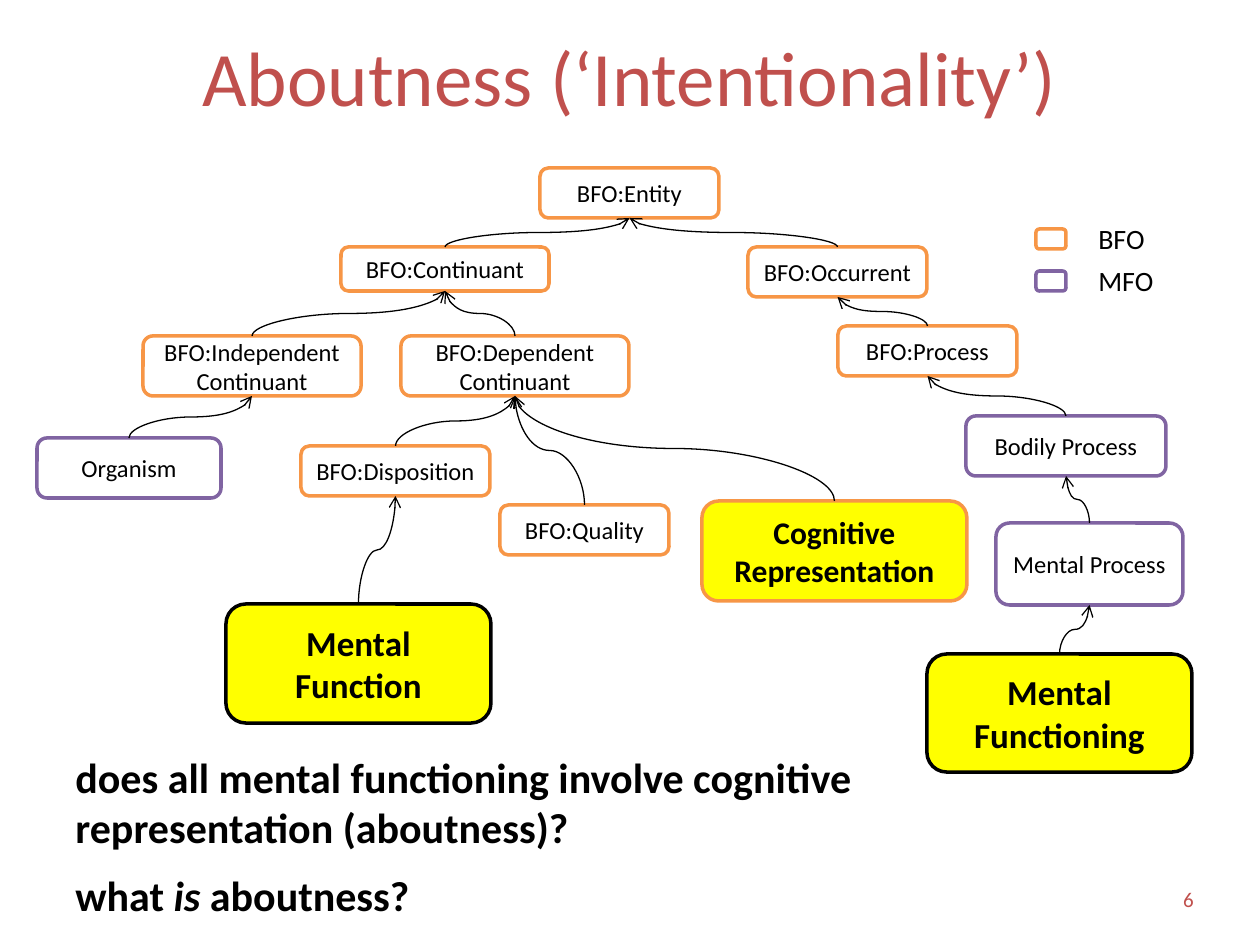
"""Builds the slide on aboutness: a class tree, its legend and two questions."""
from dataclasses import dataclass

from lxml.etree import SubElement
from pptx import Presentation
from pptx.dml.color import RGBColor
from pptx.enum.shapes import MSO_CONNECTOR as CONN, MSO_SHAPE as SHAPE
from pptx.enum.text import MSO_ANCHOR as ANCHOR, PP_ALIGN as ALIGN
from pptx.oxml.ns import qn
from pptx.util import Emu, Pt


@dataclass(frozen=True)
class Theme:
    font: str = "Calibri"
    accent: str = "C0504D"
    ink: str = "000000"
    paper: str = "FFFFFF"
    bfo: str = "F79646"
    mfo: str = "8064A2"
    focus: str = "FFFF00"
    title: int = 44
    question: int = 24
    function: int = 20
    representation: int = 18
    legend: int = 16
    node: int = 14
    number: int = 12
    outline: float = 2
    link: float = 0.75


def px(n):
    return Emu(round(n * 914400 / 126))


def rgb(color):
    return RGBColor.from_string(color)


class Deck:
    def __init__(self, theme, width, height):
        self.t = theme
        self.prs = Presentation()
        self.prs.slide_width, self.prs.slide_height = px(width), px(height)
        self.s = self.prs.slides.add_slide(self.prs.slide_layouts[6])

    def style(self, p, size, color, bold=False, align=ALIGN.LEFT):
        p.alignment = align
        f = p.font
        f.name, f.size, f.bold = self.t.font, Pt(size), bold
        f.color.rgb = rgb(color)

    def text(self, box, paragraphs, size, color, bold=False, align=ALIGN.LEFT,
             anchor=ANCHOR.TOP, gap=0):
        tf = self.s.shapes.add_textbox(*map(px, box)).text_frame
        tf.word_wrap, tf.vertical_anchor = True, anchor
        for i, runs in enumerate(paragraphs):
            p = tf.add_paragraph() if i else tf.paragraphs[0]
            self.style(p, size, color, bold, align)
            if i:
                p.space_before = Pt(gap)
            for words, italic in runs:
                r = p.add_run()
                r.text = words
                if italic:
                    r.font.italic = True

    def node(self, box, line, label="", size=None, fill=None, bold=False):
        sp = self.s.shapes.add_shape(SHAPE.ROUNDED_RECTANGLE, *map(px, box))
        sp.shadow.inherit = False
        sp.fill.solid()
        sp.fill.fore_color.rgb = rgb(fill or self.t.paper)
        sp.line.color.rgb, sp.line.width = rgb(line), Pt(self.t.outline)
        if label:
            tf = sp.text_frame
            tf.word_wrap, tf.vertical_anchor = True, ANCHOR.MIDDLE
            p = tf.paragraphs[0]
            p.text = label
            self.style(p, size or self.t.node, self.t.ink, bold, ALIGN.CENTER)
        return sp

    def link(self, child, parent):
        x1, y1 = child.left + child.width // 2, child.top
        x2, y2 = parent.left + parent.width // 2, parent.top + parent.height
        c = self.s.shapes.add_connector(CONN.CURVE, x1, y1, x2, y2)
        c.begin_connect(child, 0)
        c.end_connect(parent, 2)
        w, h = y1 - y2, abs(x2 - x1)
        c.left, c.top = Emu((x1 + x2 - w) // 2), Emu((y1 + y2 - h) // 2)
        c.width, c.height = Emu(w), Emu(h)
        rightward = x2 > x1
        xfrm = c._element.spPr.find(qn("a:xfrm"))
        xfrm.set("rot", "5400000" if rightward else "16200000")
        xfrm.set("flipH", "1" if rightward else "0")
        xfrm.set("flipV", "1")
        c.line.color.rgb, c.line.width = rgb(self.t.ink), Pt(self.t.link)
        SubElement(c.line._get_or_add_ln(), qn("a:tailEnd"), type="arrow")
        SubElement(c._element.spPr, qn("a:effectLst"))


def main():
    t = Theme()
    d = Deck(t, 1260, 945)
    d.text((63, 21, 1134, 110), [[("Aboutness (‘Intentionality’)", False)]],
           t.title, t.accent, align=ALIGN.CENTER, anchor=ANCHOR.MIDDLE)
    d.text((912, 882, 294, 34), [[("6", False)]], t.number, t.accent,
           align=ALIGN.RIGHT, anchor=ANCHOR.MIDDLE)

    plain = [
        ("BFO:Entity", (540, 168, 179, 50), t.bfo, None),
        ("BFO:Continuant", (341, 247, 208, 44), t.bfo, "BFO:Entity"),
        ("BFO:Occurrent", (748, 247, 179, 50), t.bfo, "BFO:Entity"),
        ("BFO:Process", (838, 326, 179, 50), t.bfo, "BFO:Occurrent"),
        ("BFO:Independent Continuant", (143, 336, 218, 60), t.bfo, "BFO:Continuant"),
        ("BFO:Dependent Continuant", (401, 336, 228, 60), t.bfo, "BFO:Continuant"),
        ("Organism", (37, 438, 184, 60), t.mfo, "BFO:Independent Continuant"),
        ("BFO:Disposition", (301, 446, 189, 50), t.bfo, "BFO:Dependent Continuant"),
        ("BFO:Quality", (500, 505, 169, 50), t.bfo, "BFO:Dependent Continuant"),
        ("Bodily Process", (966, 416, 200, 60), t.mfo, "BFO:Process"),
        ("Mental Process", (996, 523, 187, 82), t.mfo, "Bodily Process"),
    ]
    focal = [
        ("Cognitive Representation", (702, 501, 265, 100), t.bfo,
         "BFO:Dependent Continuant", t.representation),
        ("Mental Function", (226, 604, 265, 119), t.ink, "BFO:Disposition", t.function),
        ("Mental Functioning", (927, 654, 265, 118), t.ink, "Mental Process", t.function),
    ]
    nodes = {name: d.node(box, line, name) for name, box, line, _ in plain}
    for name, box, line, _, size in focal:
        nodes[name] = d.node(box, line, name, size, t.focus, True)
    for name, _, _, parent, *_ in plain + focal:
        if parent:
            d.link(nodes[name], nodes[parent])

    for i, (name, color) in enumerate([("BFO", t.bfo), ("MFO", t.mfo)]):
        y = 229 + 42 * i
        d.node((1036, y, 30, 20), color)
        d.text((1086, y - 14, 90, 46), [[(name, False)]], t.legend, t.ink)

    d.text((63, 745, 853, 183), [
        [("does all mental functioning involve cognitive representation (aboutness)?", False)],
        [("what ", False), ("is ", True), ("aboutness?", False)],
    ], t.question, t.ink, bold=True, gap=10)
    d.prs.save("out.pptx")


if __name__ == "__main__":
    main()
